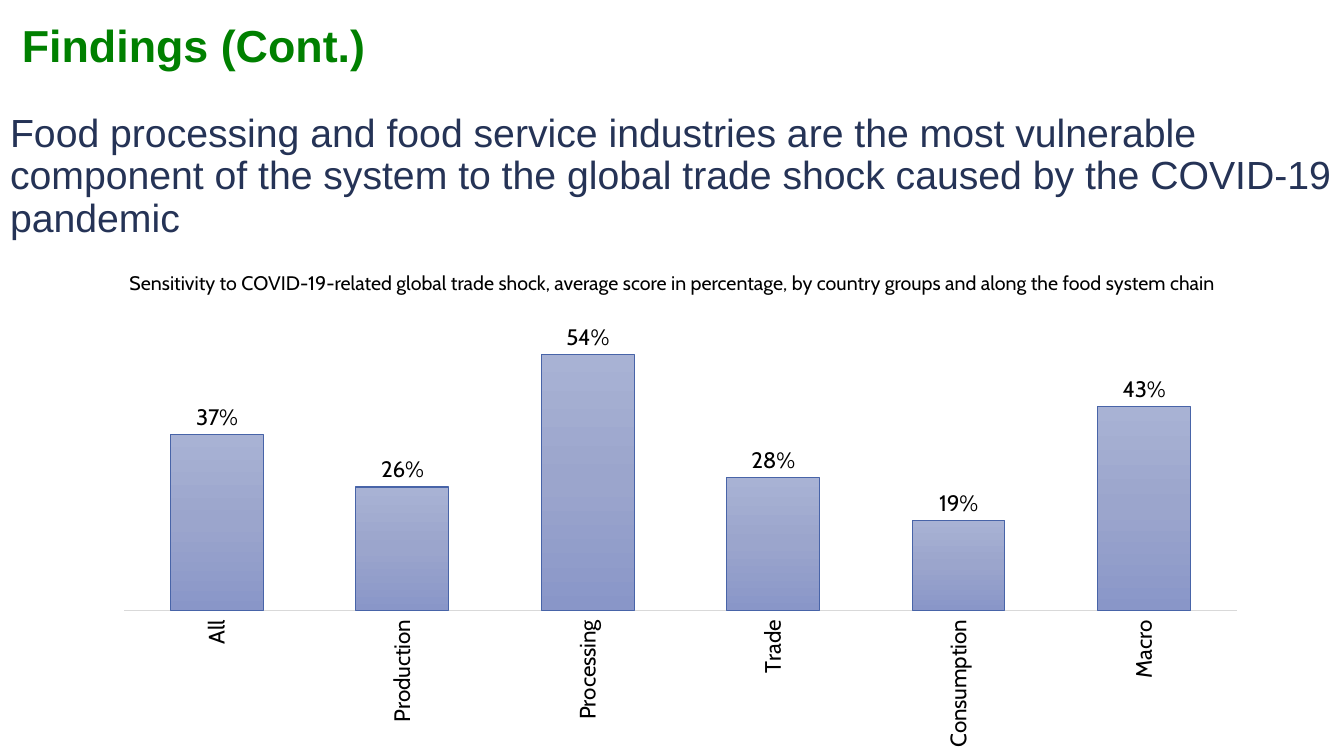
from copy import deepcopy

from lxml.etree import SubElement
from pptx import Presentation
from pptx.chart.data import CategoryChartData as ChartData
from pptx.dml.color import RGBColor
from pptx.enum.chart import XL_CHART_TYPE as ChartType
from pptx.enum.chart import XL_LABEL_POSITION as LabelPosition
from pptx.enum.chart import XL_TICK_LABEL_POSITION as TickLabels
from pptx.enum.chart import XL_TICK_MARK as TickMark
from pptx.enum.text import MSO_ANCHOR as Anchor
from pptx.enum.text import MSO_AUTO_SIZE as AutoSize
from pptx.enum.text import PP_ALIGN as Align
from pptx.oxml.ns import qn
from pptx.util import Pt

EMU_PER_PX = 914400 / 100.8


def px(length):
    return round(length * EMU_PER_PX)


def color(hex_string):
    return RGBColor.from_string(hex_string)


class Slide:
    heading_font, chart_font = "Arial", "Cabin"
    navy, green, black = "253356", "008000", "000000"
    bar_line, axis_line = "4864A8", "D9D9D9"
    bar_gradient = ("A8B2D4", "9BA5CC", "8996C8")

    def __init__(self, deck):
        self.page = deck.slides.add_slide(deck.slide_layouts[5])

    def style_font(self, font, name, size, hex_string, bold=False):
        font.name, font.size, font.bold = name, Pt(size), bold
        font.color.rgb = color(hex_string)

    def fill_text(self, box, text, name, size, hex_string, bold=False,
                  align=Align.LEFT, anchor=Anchor.MIDDLE, spacing=0.9):
        frame = box.text_frame
        frame.text = text
        frame.word_wrap = True
        frame.auto_size = AutoSize.NONE
        frame.vertical_anchor = anchor
        para = frame.paragraphs[0]
        para.alignment, para.line_spacing = align, spacing
        self.style_font(para.runs[0].font, name, size, hex_string, bold)

    def title(self, text, left, top, width, height):
        box = self.page.shapes.title
        box.left, box.top, box.width, box.height = map(px, (left, top, width, height))
        self.fill_text(box, text, self.heading_font, 28, self.navy)

    def text(self, text, left, top, width, height, *style, **layout):
        box = self.page.shapes.add_textbox(*map(px, (left, top, width, height)))
        self.fill_text(box, text, *style, **layout)

    def column_chart(self, scores, left, top, width, height):
        data = ChartData(number_format="0%")
        data.categories = list(scores)
        data.add_series("Series 1", list(scores.values()))
        chart = self.page.shapes.add_chart(
            ChartType.COLUMN_CLUSTERED, *map(px, (left, top, width, height)), data).chart
        chart.has_legend = chart.has_title = False
        self.style_font(chart.font, self.chart_font, 16, self.black)
        self.style_axes(chart)
        self.style_bars(chart.plots[0])
        self.place_plot(chart, x=0.02, y=0.02, w=0.96, h=0.65)

    def style_axes(self, chart):
        value_axis = chart.value_axis
        value_axis.visible = value_axis.has_major_gridlines = False
        value_axis.minimum_scale, value_axis.maximum_scale = 0, 0.6

        axis = chart.category_axis
        axis.major_tick_mark = axis.minor_tick_mark = TickMark.NONE
        axis.tick_label_position = TickLabels.LOW
        axis.format.line.color.rgb = color(self.axis_line)
        axis.format.line.width = Pt(0.75)
        self.style_font(axis.tick_labels.font, self.chart_font, 16, self.black)
        # Category names read upwards
        body = axis._element.find(qn("c:txPr")).find(qn("a:bodyPr"))
        body.set("rot", "-5400000")
        body.set("vert", "horz")

    def style_bars(self, plot):
        plot.gap_width, plot.overlap = 100, -24
        plot.vary_by_categories = False
        series = plot.series[0]
        series.format.line.color.rgb = color(self.bar_line)
        series.format.line.width = Pt(0.75)

        # Three-stop gradient running downwards
        fill = series.format.fill
        fill.gradient()
        fill.gradient_angle = 270
        stops = series._element.find(".//" + qn("a:gsLst"))
        stops.insert(1, deepcopy(stops[0]))
        for index, stop in enumerate(fill.gradient_stops):
            stop.position = index / 2
            stop.color.rgb = color(self.bar_gradient[index])

        plot.has_data_labels = True
        labels = plot.data_labels
        labels.show_value = True
        labels.position = LabelPosition.OUTSIDE_END
        labels.number_format, labels.number_format_is_linked = "0%", False
        self.style_font(labels.font, self.chart_font, 16, self.black)

    def place_plot(self, chart, **fractions):
        plot_area = chart._chartSpace.find(".//" + qn("c:plotArea"))
        layout = plot_area.find(qn("c:layout"))
        if layout is None:
            layout = SubElement(plot_area, qn("c:layout"))
            plot_area.insert(0, layout)
        manual = SubElement(layout, qn("c:manualLayout"))
        settings = {"layoutTarget": "inner", "xMode": "edge", "yMode": "edge", **fractions}
        for tag, value in settings.items():
            SubElement(manual, qn("c:" + tag)).set("val", str(value))


def main():
    deck = Presentation()
    deck.slide_width, deck.slide_height = px(1344), px(756)
    slide = Slide(deck)

    # Main message
    slide.title("Food processing and food service industries are the most vulnerable "
                "component of the system to the global trade shock caused by the "
                "COVID-19 pandemic", 0, 104, 1344, 146)

    # Chart with its caption
    slide.text("Sensitivity to COVID-19-related global trade shock, average score in "
               "percentage, by country groups and along the food system chain",
               93, 266, 1159, 34, slide.chart_font, 14, slide.black,
               align=Align.CENTER, anchor=Anchor.TOP, spacing=1.0)
    scores = {"All": 0.37, "Production": 0.26, "Processing": 0.54,
              "Trade": 0.28, "Consumption": 0.19, "Macro": 0.43}
    slide.column_chart(scores, 101, 317, 1159, 438)

    # Section heading
    slide.text("Findings (Cont.)", 12, 12, 1159, 72,
               slide.heading_font, 32, slide.green, bold=True)

    deck.save("out.pptx")


if __name__ == "__main__":
    main()
